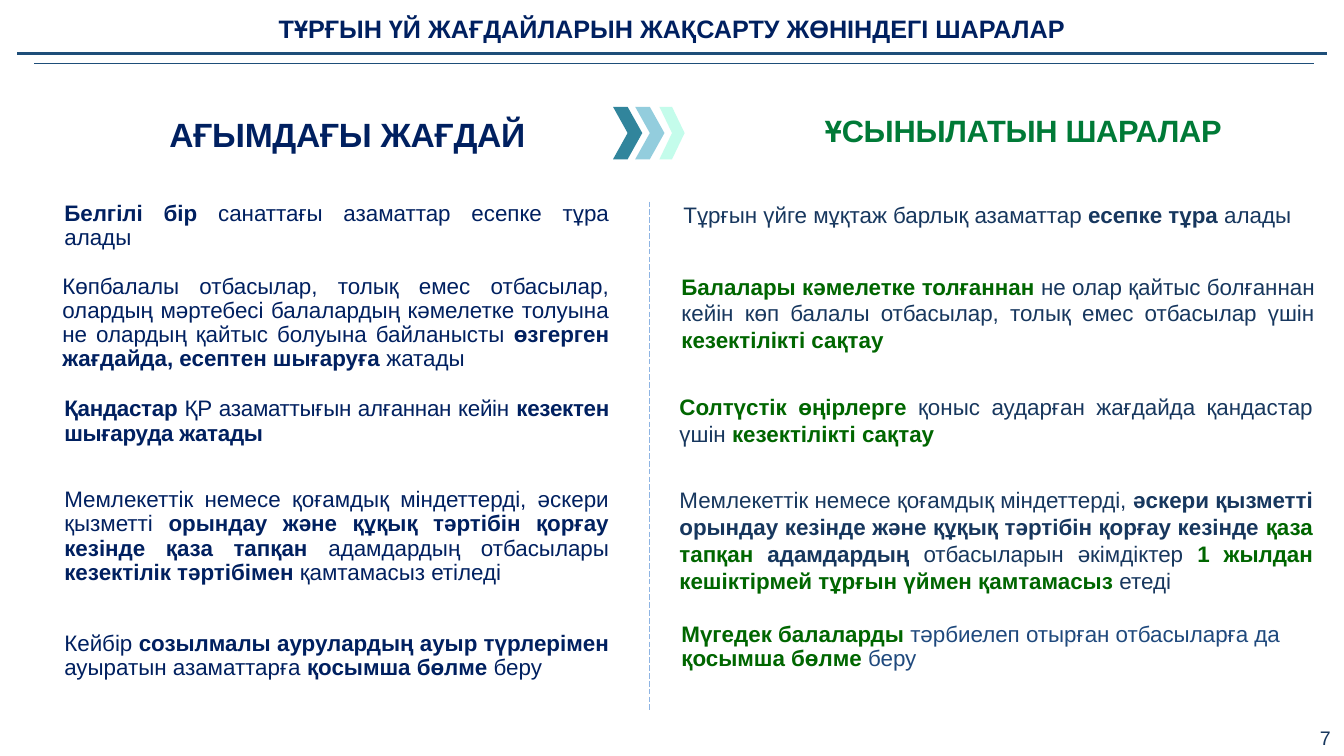
from dataclasses import dataclass

from lxml.etree import SubElement
from pptx import Presentation
from pptx.dml.color import RGBColor
from pptx.enum.dml import MSO_LINE
from pptx.enum.shapes import MSO_CONNECTOR, MSO_SHAPE
from pptx.enum.text import MSO_ANCHOR, MSO_AUTO_SIZE, PP_ALIGN
from pptx.oxml.ns import qn
from pptx.util import Inches, Pt


@dataclass(frozen=True)
class Theme:
    font: str = "Arial"
    navy: str = "002060"
    slate: str = "17375E"
    blue: str = "1F497D"
    green: str = "006600"
    heading_green: str = "007A37"
    rule: str = "1E4E79"
    divider: str = "8EB4E3"
    chevrons: tuple = ("31859C", "93CDDD", "C4FCEB")
    title_size: int = 18
    current_size: int = 24
    proposed_size: int = 22
    body_size: int = 16
    number_size: int = 14


THEME = Theme()


def add_run(paragraph, text, *, size, color, bold=False, tracking=None):
    run = paragraph.add_run()
    run.text = text
    run.font.name = THEME.font
    run.font.size = Pt(size)
    run.font.bold = bold
    run.font.color.rgb = RGBColor.from_string(color)
    if tracking is not None:
        run.font._element.set("spc", str(round(tracking * 100)))


class SlideBuilder:
    def __init__(self, slide, theme):
        self.slide = slide
        self.theme = theme

    def fill_frame(self, frame, pieces, *, size, color, align=PP_ALIGN.JUSTIFY,
                   anchor=MSO_ANCHOR.MIDDLE, insets=(0.1, 0.05, 0.1, 0.05),
                   spacing=1.0, before=0, after=0, tracking=None):
        frame.word_wrap = True
        frame.auto_size = MSO_AUTO_SIZE.NONE
        frame.vertical_anchor = anchor
        (frame.margin_left, frame.margin_top,
         frame.margin_right, frame.margin_bottom) = map(Inches, insets)
        paragraph = frame.paragraphs[0]
        paragraph.alignment = align
        paragraph.line_spacing = spacing
        paragraph.space_before = Pt(before)
        paragraph.space_after = Pt(after)
        for text, bold, accent in pieces:
            add_run(paragraph, text, size=size, color=accent or color,
                    bold=bold, tracking=tracking)

    def title(self, text, left, top, width, height):
        heading = self.slide.shapes.title
        heading.left, heading.top = Inches(left), Inches(top)
        heading.width, heading.height = Inches(width), Inches(height)
        self.fill_frame(heading.text_frame, [strong(text)], size=self.theme.title_size,
                        color=self.theme.navy, align=PP_ALIGN.CENTER,
                        insets=(0.07, 0.04, 0.07, 0.04))

    def text(self, pieces, left, top, width, height, **style):
        block = self.slide.shapes.add_textbox(
            Inches(left), Inches(top), Inches(width), Inches(height))
        self.fill_frame(block.text_frame, pieces, **style)

    def column_heading(self, text, left, top, width, height, size, color):
        self.text([strong(text)], left, top, width, height, size=size, color=color,
                  align=PP_ALIGN.CENTER, anchor=MSO_ANCHOR.BOTTOM,
                  insets=(0, 0.02, 0, 0), spacing=0.9, before=0.9, tracking=-0.2)

    def line(self, x1, y1, x2, y2, color, weight, dash=None):
        rule = self.slide.shapes.add_connector(
            MSO_CONNECTOR.STRAIGHT, Inches(x1), Inches(y1), Inches(x2), Inches(y2))
        rule.line.color.rgb = RGBColor.from_string(color)
        rule.line.width = Pt(weight)
        if dash is not None:
            rule.line.dash_style = dash
        SubElement(rule._element.spPr, qn("a:effectLst"))

    def chevron(self, left, top, width, height, color):
        arrow = self.slide.shapes.add_shape(
            MSO_SHAPE.CHEVRON, Inches(left), Inches(top), Inches(width), Inches(height))
        arrow.shadow.inherit = False
        arrow.fill.solid()
        arrow.fill.fore_color.rgb = RGBColor.from_string(color)
        arrow.line.fill.background()


def plain(text):
    return text, False, None


def strong(text):
    return text, True, None


def key(text):
    return text, True, THEME.green


CURRENT = [
    (0.54, 1.83, [strong("Белгілі бір "), plain("санаттағы азаматтар есепке тұра алады")]),
    (0.52, 2.79, [
        plain("Көпбалалы отбасылар, толық емес отбасылар, олардың мәртебесі балалардың "
              "кәмелетке толуына не олардың қайтыс болуына байланысты "),
        strong("өзгерген жағдайда, есептен шығаруға "), plain("жатады")]),
    (0.54, 3.77, [strong("Қандастар "), plain("ҚР азаматтығын алғаннан кейін "),
                  strong("кезектен шығаруда жатады")]),
    (0.54, 4.91, [
        plain("Мемлекеттік немесе қоғамдық міндеттерді, әскери қызметті "),
        strong("орындау және құқық тәртібін қорғау кезінде қаза тапқан "),
        plain("адамдардың отбасылары "), strong("кезектілік тәртібімен "),
        plain("қамтамасыз етіледі")]),
    (0.54, 6.1, [
        plain("Кейбір "), strong("созылмалы аурулардың ауыр түрлерімен "),
        plain("ауыратын азаматтарға "), strong("қосымша бөлме"), plain(" беру")]),
]

PROPOSED = [
    (6.68, 1.71, [plain("Тұрғын үйге мұқтаж барлық азаматтар "),
                  strong("есепке тұра "), plain("алады")]),
    (6.66, 2.69, [
        key("Балалары кәмелетке толғаннан "),
        plain("не олар қайтыс болғаннан кейін көп балалы отбасылар, "
              "толық емес отбасылар үшін"),
        key(" кезектілікті сақтау")]),
    (6.64, 3.75, [key("Солтүстік өңірлерге "),
                  plain("қоныс аударған жағдайда қандастар үшін"),
                  key(" кезектілікті сақтау")]),
    (6.64, 4.94, [
        plain("Мемлекеттік немесе қоғамдық міндеттерді, "),
        strong("әскери қызметті орындау кезінде және құқық тәртібін қорғау кезінде "),
        key("қаза тапқан "), strong("адамдардың "), plain("отбасыларын әкімдіктер "),
        key("1 жылдан кешіктірмей тұрғын үймен қамтамасыз "), plain("етеді")]),
]

DISABILITY = [key("Мүгедек балаларды "), plain("тәрбиелеп отырған отбасыларға да "),
              key("қосымша бөлме "), plain("беру")]


def main():
    deck = Presentation()
    deck.slide_width, deck.slide_height = Inches(13.33), Inches(7.5)
    page = SlideBuilder(deck.slides.add_slide(deck.slide_layouts[5]), THEME)

    page.title("ТҰРҒЫН ҮЙ ЖАҒДАЙЛАРЫН ЖАҚСАРТУ ЖӨНІНДЕГІ ШАРАЛАР", 0, 0.04, 13.33, 0.48)
    page.line(0.17, 0.53, 13.16, 0.53, THEME.rule, 2.25)
    page.line(0.34, 0.63, 13.03, 0.63, THEME.rule, 1)
    page.text([plain("7")], 12.79, 7.13, 0.54, 0.37, size=THEME.number_size,
              color=THEME.slate, align=PP_ALIGN.RIGHT, insets=(0.13, 0.07, 0.13, 0.07))

    page.column_heading("ҰСЫНЫЛАТЫН ШАРАЛАР", 7.78, 1.13, 4.74, 0.35,
                        THEME.proposed_size, THEME.heading_green)
    page.column_heading("АҒЫМДАҒЫ ЖАҒДАЙ", 1.08, 1.16, 4.73, 0.38,
                        THEME.current_size, THEME.navy)
    page.line(6.44, 2, 6.44, 7.06, THEME.divider, 0.5, MSO_LINE.LONG_DASH)

    tight = dict(size=THEME.body_size, spacing=0.9, before=10)
    for left, top, pieces in CURRENT:
        tracking = -0.2 if pieces[0][0] == "Қандастар " else None
        page.text(pieces, left, top, 6.14 - left, 0.83, color=THEME.navy,
                  tracking=tracking, **tight)
    for left, top, pieces in PROPOSED:
        page.text(pieces, left, top, 6.48, 0.83, size=THEME.body_size,
                  color=THEME.slate, after=6)
    page.text(DISABILITY, 6.66, 6.01, 6.48, 0.83, color=THEME.blue,
              align=PP_ALIGN.LEFT, **tight)

    for left, width, color in zip((6.08, 6.3, 6.54), (0.29, 0.29, 0.25), THEME.chevrons):
        page.chevron(left, 1.06, width, 0.52, color)

    deck.save("out.pptx")


if __name__ == "__main__":
    main()
